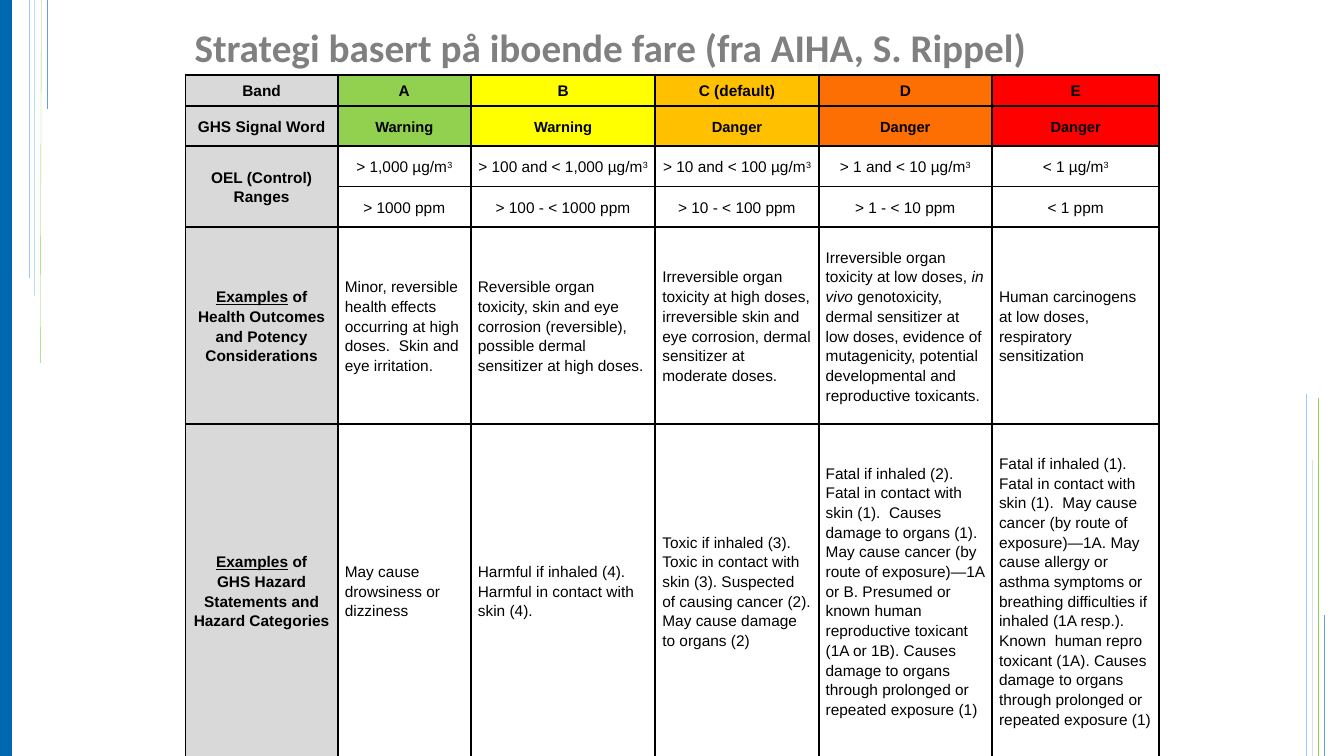
import pptx
import pptx.util
import pptx.dml.color
import pptx.enum.shapes
import pptx.enum.text
import pptx.oxml
import pptx.oxml.ns

Inches, Pt = pptx.util.Inches, pptx.util.Pt
RGBColor = pptx.dml.color.RGBColor
ALIGN, ANCHOR = pptx.enum.text.PP_ALIGN, pptx.enum.text.MSO_ANCHOR
NS = pptx.oxml.ns.nsdecls("a")

BLACK = RGBColor(0x00, 0x00, 0x00)
WHITE = RGBColor(0xFF, 0xFF, 0xFF)
GREY = RGBColor(0x80, 0x80, 0x80)
SILVER = RGBColor(0xD9, 0xD9, 0xD9)
NAVY = RGBColor(0x00, 0x67, 0xB1)
SKY = RGBColor(0x99, 0xCC, 0xFF)
GREEN = RGBColor(0x92, 0xD0, 0x50)
PALE = RGBColor(0xDF, 0xE0, 0xE0)
BLUE = RGBColor(0x66, 0x99, 0xFF)
AQUA = RGBColor(0xB9, 0xE1, 0xE8)
YELLOW = RGBColor(0xFF, 0xFF, 0x00)
AMBER = RGBColor(0xFF, 0xC0, 0x00)
ORANGE = RGBColor(0xFD, 0x6E, 0x03)
RED = RGBColor(0xFF, 0x00, 0x00)

deck = pptx.Presentation()
deck.slide_width, deck.slide_height = Inches(13.33), Inches(7.5)
slide = deck.slides.add_slide(deck.slide_layouts[5])
shapes = slide.shapes

title = shapes.title
title.left, title.top = Inches(1.83), Inches(0)
title.width, title.height = Inches(9.67), Inches(0.92)
title.text_frame.text = "Strategi basert på iboende fare (fra AIHA, S. Rippel)"
title.text_frame.vertical_anchor = ANCHOR.MIDDLE
head = title.text_frame.paragraphs[0]
head.alignment = ALIGN.LEFT
head.font.name, head.font.size, head.font.bold = "Calibri", Pt(28), True
head.font.color.rgb = GREY

rules = [
    (12.95, 3.91, 12.95, 7.5, SKY),
    (13.07, 3.95, 13.07, 7.5, GREEN),
    (13.01, 4.56, 13.01, 7.5, PALE),
    (13.13, 6.1, 13.13, 7.5, BLUE),
    (0.47, 1.08, 0.47, 0, BLUE),
    (0.29, 2.76, 0.29, 0, SKY),
    (0.4, 3.6, 0.41, 0, GREEN),
    (0.34, 0, 0.34, 2.94, AQUA),
]
for *ends, tint in rules:
    rule = shapes.add_connector(
        pptx.enum.shapes.MSO_CONNECTOR.STRAIGHT, *map(Inches, ends))
    rule.line.color.rgb = tint
    rule.line.width = Pt(0.25)
    rule._element.spPr.append(pptx.oxml.parse_xml(f"<a:effectLst {NS}/>"))

bar = shapes.add_shape(pptx.enum.shapes.MSO_SHAPE.RECTANGLE,
                       0, 0, Inches(0.11), deck.slide_height)
bar.shadow.inherit = False
bar.fill.solid()
bar.fill.fore_color.rgb = NAVY
bar.line.color.rgb = NAVY
bar.line.width = Pt(2)

bands = [SILVER, GREEN, YELLOW, AMBER, ORANGE, RED]
widths = [1.51, 1.32, 1.83, 1.62, 1.72, 1.66]
heights = [0.31, 0.4, 0.4, 0.4, 1.96, 3.3]
limits = ["> 1,000", "> 100 and < 1,000", "> 10 and < 100",
          "> 1 and < 10", "< 1"]
parts = ["> 1000", "> 100 - < 1000", "> 10 - < 100", "> 1 - < 10", "< 1"]
rows = [
    ["Band", "A", "B", "C (default)", "D", "E"],
    ["GHS Signal Word", "Warning", "Warning", "Danger", "Danger", "Danger"],
    ["OEL (Control) Ranges"]
    + [[(f"{limit} µg/m", ""), ("3", "sup")] for limit in limits],
    [""] + [f"{part} ppm" for part in parts],
    [
        [("Examples", "under"),
         (" of Health Outcomes and Potency Considerations", "")],
        "Minor, reversible health effects occurring at high doses.  "
        "Skin and eye irritation.",
        "Reversible organ toxicity, skin and eye corrosion (reversible), "
        "possible dermal sensitizer at high doses.",
        "Irreversible organ toxicity at high doses, irreversible skin and "
        "eye corrosion, dermal sensitizer at moderate doses.",
        [("Irreversible organ toxicity at low doses, ", ""),
         ("in vivo", "slant"),
         (" genotoxicity, dermal sensitizer at low doses, evidence of "
          "mutagenicity, potential developmental and reproductive "
          "toxicants.", "")],
        "Human carcinogens at low doses, respiratory sensitization",
    ],
    [
        [("Examples", "under"), (" of", ""), ("", "break"),
         ("GHS Hazard Statements and Hazard Categories", "")],
        "May cause drowsiness or dizziness",
        "Harmful if inhaled (4). Harmful in contact with skin (4).",
        "Toxic if inhaled (3). Toxic in contact with skin (3). Suspected of "
        "causing cancer (2). May cause damage to organs (2)",
        "Fatal if inhaled (2). Fatal in contact with skin (1).  Causes "
        "damage to organs (1). May cause cancer (by route of exposure)—1A "
        "or B. Presumed or known human reproductive toxicant (1A or 1B). "
        "Causes damage to organs through prolonged or repeated exposure (1)",
        "Fatal if inhaled (1).  Fatal in contact with skin (1).  May cause "
        "cancer (by route of exposure)—1A. May cause allergy or asthma "
        "symptoms or breathing difficulties if inhaled (1A resp.). Known  "
        "human repro toxicant (1A). Causes damage to organs through "
        "prolonged or repeated exposure (1)",
    ],
]

table = shapes.add_table(len(rows), len(widths), Inches(1.84), Inches(0.74),
                         Inches(sum(widths)), Inches(sum(heights))).table
table.first_row = table.horz_banding = False
for col, width in zip(table.columns, widths):
    col.width = Inches(width)
for row, height in zip(table.rows, heights):
    row.height = Inches(height)
table.cell(2, 0).merge(table.cell(3, 0))

for r, row in enumerate(rows):
    for c, text in enumerate(row):
        cell = table.cell(r, c)
        for side in "LRTB":
            cell._tc.get_or_add_tcPr().append(pptx.oxml.parse_xml(
                f'<a:ln{side} {NS} w="19050"><a:solidFill>'
                f'<a:srgbClr val="{BLACK}"/></a:solidFill></a:ln{side}>'))
        cell.fill.solid()
        cell.fill.fore_color.rgb = bands[c] if r < 2 or c == 0 else WHITE
        cell.vertical_anchor = ANCHOR.MIDDLE
        cell.margin_left = cell.margin_right = Inches(0.07)
        cell.margin_top = cell.margin_bottom = 0
        if cell.is_spanned:
            continue
        para = cell.text_frame.paragraphs[0]
        para.alignment = ALIGN.CENTER if r < 4 or c == 0 else ALIGN.LEFT
        para.line_spacing = 1.15
        if r in (3, 4):
            para.space_after = Pt(10)
        para.font.name = "Arial"
        para.font.size = Pt(10.5 if r == 1 and c else 11)
        para.font.bold = r < 2 or c == 0
        para.font.color.rgb = BLACK
        for words, mark in [(text, "")] if isinstance(text, str) else text:
            if mark == "break":
                para.add_line_break()
                continue
            run = para.add_run()
            run.text = words
            if mark == "under":
                run.font.underline = True
            elif mark == "slant":
                run.font.italic = True
            elif mark == "sup":
                run.font._element.set("baseline", "30000")

deck.save("out.pptx")
